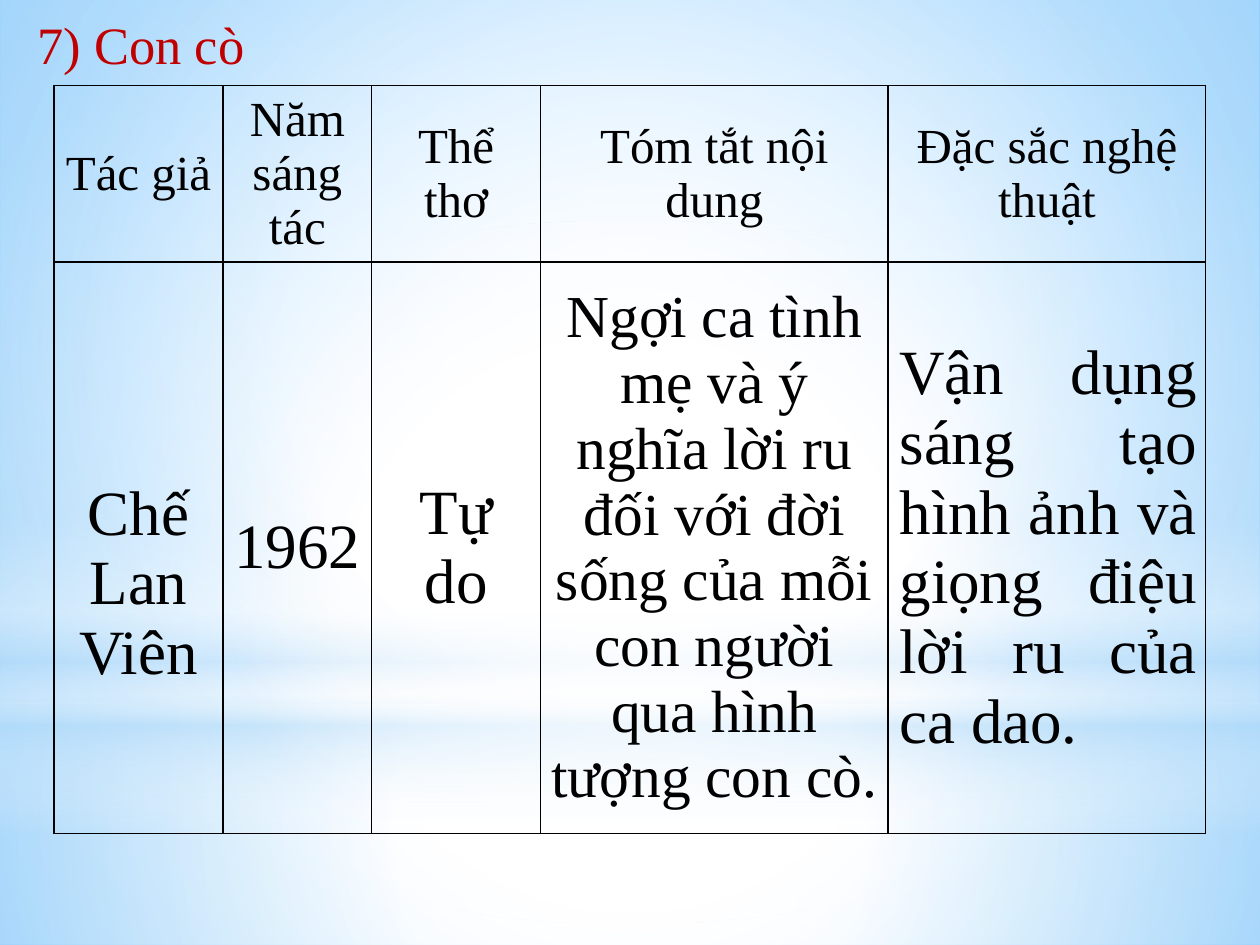
import pptx
import pptx.dml.color
import pptx.enum.shapes
import pptx.enum.text
import pptx.oxml
import pptx.oxml.ns
import pptx.util

Inches, Pt, qn = pptx.util.Inches, pptx.util.Pt, pptx.oxml.ns.qn
SHAPE = pptx.enum.shapes.MSO_SHAPE
ALIGN = pptx.enum.text.PP_ALIGN
NS = pptx.oxml.ns.nsdecls("a")

THEME = {
    "font": "Times New Roman",
    "title": "C00000", "ink": "000000",
    "white": "FFFFFF", "sky": "63BCFF", "haze": "B4DCFA",
    "title_size": 30, "head_size": 28, "body_size": 36, "summary_size": 34,
    "border": 1,
}
W, H = 10, 7.5


def paint(parent, stops, focus=None):
    """Swap the solid fill of parent for a gradient of (place, colour, opacity) stops."""
    gs = "".join(
        f'<a:gs pos="{pos * 1000}"><a:srgbClr val="{THEME[name]}">'
        f'<a:alpha val="{alpha * 1000}"/></a:srgbClr></a:gs>'
        for pos, name, alpha in stops)
    if focus:
        sides = " ".join(f'{k}="{v * 1000}"' for k, v in zip("ltrb", focus))
        way = f'<a:path path="circle"><a:fillToRect {sides}/></a:path>'
    else:
        way = '<a:lin ang="5400000" scaled="0"/>'
    grad = pptx.oxml.parse_xml(
        f'<a:gradFill {NS} rotWithShape="1"><a:gsLst>{gs}</a:gsLst>{way}</a:gradFill>')
    parent.replace(parent.find(qn("a:solidFill")), grad)


def write(p, text, size, colour, align):
    p.alignment = align
    r = p.add_run()
    r.text = text
    for name, value in {"name": THEME["font"], "size": Pt(size)}.items():
        setattr(r.font, name, value)
    r.font.color.rgb = pptx.dml.color.RGBColor.from_string(THEME[colour])


prs = pptx.Presentation()
prs.slide_width, prs.slide_height = Inches(W), Inches(H)
s = prs.slides.add_slide(prs.slide_layouts[6])

# Background
s.background.fill.solid()
paint(s.element.find(".//" + qn("p:bgPr")),
      [(0, "white", 100), (36, "white", 100), (100, "sky", 100)], (24, 44, 24, 12))

# Sky layers: shape, top and height as shares of the slide, stops, focus
centre = (50, 50, 50, 50)
layers = [
    (SHAPE.RECTANGLE, 0.744, 0.256,
     [(0, "white", 91), (37, "white", 76), (100, "haze", 79)], centre),
    (SHAPE.RECTANGLE, 0, 0.744,
     [(0, "white", 89), (48, "white", 62), (100, "haze", 79)], centre),
    (SHAPE.RECTANGLE, 0.55, 0.333,
     [(0, "white", 0), (29, "white", 30), (45, "haze", 40),
      (55, "white", 26), (65, "haze", 60), (100, "white", 0)], None),
    (SHAPE.OVAL, 0.233, 0.744, [(0, "white", 100), (56, "white", 0)], centre),
]
for kind, top, height, stops, focus in layers:
    sp = s.shapes.add_shape(kind, 0, Inches(top * H), Inches(W), Inches(height * H))
    sp.shadow.inherit = False
    sp.line.fill.background()
    sp.fill.solid()
    paint(sp.element.spPr, stops, focus)

# Title
tf = s.shapes.add_textbox(Inches(0.02 * W), Inches(0.05), Inches(1.86), Inches(0.61)).text_frame
tf.word_wrap = False
write(tf.paragraphs[0], "7) Con cò", THEME["title_size"], "title", ALIGN.LEFT)

# Table
cols = [1.34, 1.18, 1.34, 2.76, 2.52]
rows = [1.4, 4.53]
body, summary = THEME["body_size"], THEME["summary_size"]
heads = ["Tác giả", "Năm sáng tác", "Thể thơ", "Tóm tắt nội dung", "Đặc sắc nghệ thuật"]
entries = [
    ("Chế Lan Viên", body, ALIGN.CENTER, {"margin_top": Inches(0.57)}),
    ("1962", body, ALIGN.CENTER, {}),
    ("Tự do", body, ALIGN.CENTER, {}),
    ("Ngợi ca tình mẹ và ý nghĩa lời ru đối với đời sống của mỗi con người "
     "qua hình tượng con cò.", summary, ALIGN.CENTER, {}),
    ("Vận dụng sáng tạo hình ảnh và giọng điệu lời ru của ca dao.",
     body, ALIGN.JUSTIFY, {"margin_left": Inches(0.09)}),
]
grid = [[(text, THEME["head_size"], ALIGN.CENTER, {}) for text in heads], entries]
cell_format = {
    "vertical_anchor": pptx.enum.text.MSO_ANCHOR.MIDDLE,
    "margin_left": Inches(0.07), "margin_right": Inches(0.07),
    "margin_top": 0, "margin_bottom": 0,
}
table = s.shapes.add_table(len(rows), len(cols), Inches(0.43), Inches(0.68),
                           Inches(sum(cols)), Inches(sum(rows))).table
table.first_row = table.horz_banding = False
for column, width in zip(table.columns, cols):
    column.width = Inches(width)
for row, height, line in zip(table.rows, rows, grid):
    row.height = Inches(height)
    for cell, (text, size, align, extra) in zip(row.cells, line):
        for name, value in {**cell_format, **extra}.items():
            setattr(cell, name, value)
        write(cell.text_frame.paragraphs[0], text, size, "ink", align)
        cell.fill.background()
        # Borders come before the fill in the cell properties
        tcPr = cell._tc.get_or_add_tcPr()
        for i, side in enumerate("LRTB"):
            tcPr.insert(i, pptx.oxml.parse_xml(
                f'<a:ln{side} {NS} w="{Pt(THEME["border"])}"><a:solidFill>'
                f'<a:srgbClr val="{THEME["ink"]}"/></a:solidFill></a:ln{side}>'))

prs.save("out.pptx")
